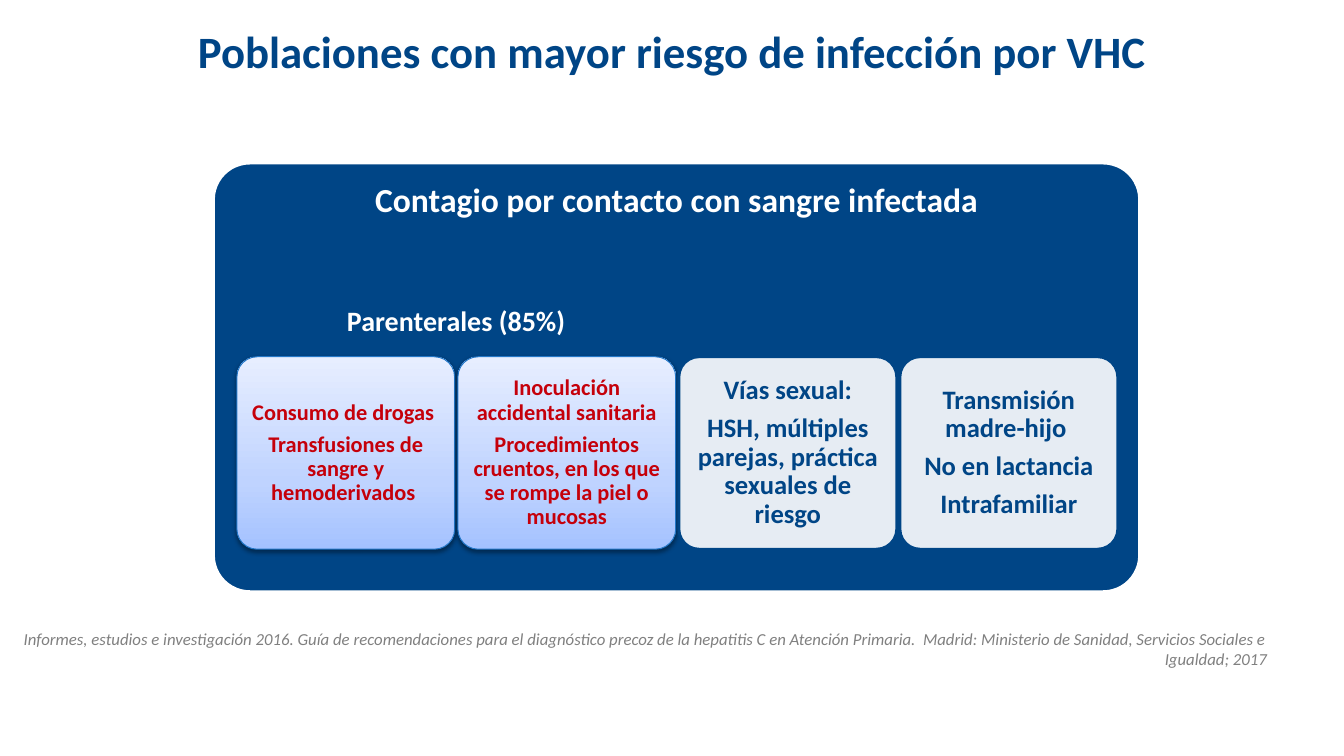
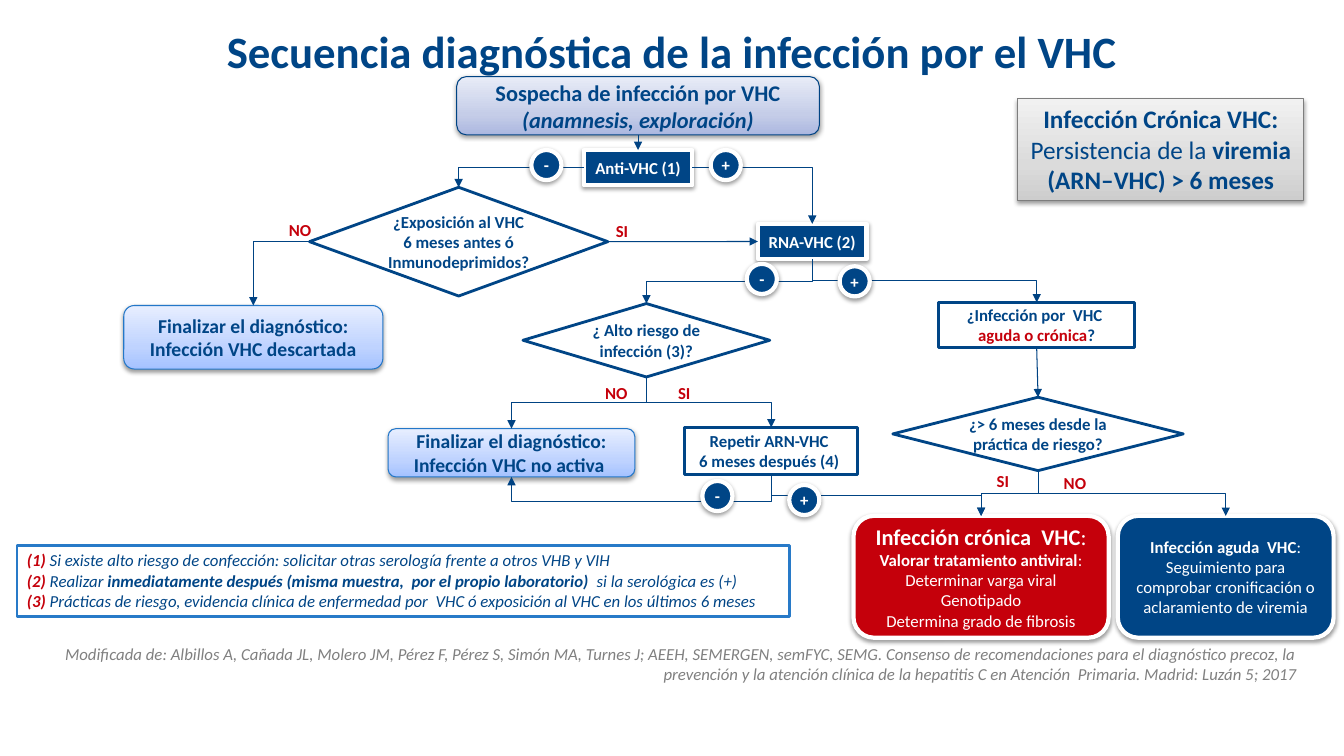
import pptx
import pptx.util
import pptx.dml.color
import pptx.enum.shapes
import pptx.enum.text
import pptx.oxml
import pptx.oxml.ns
import copy

Cm, Pt = pptx.util.Cm, pptx.util.Pt
qn = pptx.oxml.ns.qn
SHAPE = pptx.enum.shapes.MSO_SHAPE
CONNECTOR = pptx.enum.shapes.MSO_CONNECTOR
ALIGN = pptx.enum.text.PP_ALIGN
ANCHOR = pptx.enum.text.MSO_ANCHOR

COLORS = {
    "navy": "004586", "link": "004383", "red": "C5000B", "white": "FFFFFF",
    "grey": "808080", "edge": "2377C8", "note": "287AC8", "steel": "7D7D7D",
}
GRADIENTS = {
    "sky": ("A4C2FF", "BFD3FF", "E7EEFF"),
    "lilac": ("ABB7E0", "C5CDE8", "E8ECF7"),
    "silver": ("CDCDCD", "DBDBDB", "F1F1F1"),
}
STOPS = (0, 0.35, 1)
SHADOW = (
    '<a:outerShdw xmlns:a="http://schemas.openxmlformats.org/drawingml/2006/main" '
    'blurRad="40000" dist="20000" dir="5400000" rotWithShape="0">'
    '<a:srgbClr val="000000"><a:alpha val="38000"/></a:srgbClr></a:outerShdw>'
)
TOP, LEFT, BOTTOM, RIGHT = range(4)


def rgb(name):
    return pptx.dml.color.RGBColor.from_string(COLORS[name])


def site(sp, side):
    """Middle point of one side of a shape."""
    x, y = sp.left + sp.width // 2, sp.top + sp.height // 2
    return [(x, sp.top), (sp.left, y), (x, sp.top + sp.height),
            (sp.left + sp.width, y)][side]


class Deck:
    font = "Calibri"

    def __init__(self):
        self.prs = pptx.Presentation()
        self.prs.slide_width, self.prs.slide_height = Cm(33.87), Cm(19.05)

    def slide(self, title, source, source_at):
        self.s = self.prs.slides.add_slide(self.prs.slide_layouts[6])
        self.text((*source_at, 32.18, 0.81), [source], 12, "grey", bold=False,
                  italic=True, align=ALIGN.RIGHT, anchor=ANCHOR.TOP)
        self.text((1.7, 0.43, 30.48, 1.68), [title], 32, "navy")

    def put_text(self, sp, paras, size, color, bold=True, italic=False,
                 align=ALIGN.CENTER, anchor=ANCHOR.MIDDLE, inset=None, spaced=False):
        """Each paragraph is a string or a list of (text, font changes)."""
        tf = sp.text_frame
        tf.word_wrap, tf.vertical_anchor = True, anchor
        if inset is not None:
            tf.margin_left = tf.margin_right = Cm(inset)
            tf.margin_top = tf.margin_bottom = Cm(inset)
        for i, runs in enumerate(paras):
            p = tf.add_paragraph() if i else tf.paragraphs[0]
            p.alignment = align
            if spaced:
                p.line_spacing, p.space_after = 0.9, Pt(round(0.35 * size, 1))
            f = p.font
            f.name, f.size, f.bold, f.italic = self.font, Pt(size), bold, italic
            f.color.rgb = rgb(color)
            for text, changes in [(runs, {})] if isinstance(runs, str) else runs:
                r = p.add_run()
                r.text = text
                r.font.size = changes.get("size")
                r.font.bold = changes.get("bold")
                r.font.italic = changes.get("italic")
                if "color" in changes:
                    r.font.color.rgb = rgb(changes["color"])

    def text(self, at, paras, size, color, **style):
        sp = self.s.shapes.add_textbox(*map(Cm, at))
        self.put_text(sp, paras, size, color, **style)

    def shape(self, kind, at, fill, line, width, paras, size, color,
              shadow=False, adj=None, alpha=None, **style):
        sp = self.s.shapes.add_shape(kind, *map(Cm, at))
        sp.shadow.inherit = False
        if adj is not None:
            sp.adjustments[0] = adj
        if fill in GRADIENTS:
            self.gradient(sp, GRADIENTS[fill])
        else:
            sp.fill.solid()
            sp.fill.fore_color.rgb = rgb(fill)
        spPr = sp._element.spPr
        if alpha is not None:
            clr = spPr.find(".//" + qn("a:srgbClr"))
            clr.append(clr.makeelement(qn("a:alpha"), {"val": str(alpha * 1000)}))
        sp.line.color.rgb, sp.line.width = rgb(line), Pt(width)
        if shadow:
            spPr.find(qn("a:effectLst")).append(pptx.oxml.parse_xml(SHADOW))
        self.put_text(sp, paras, size, color, **style)
        return sp

    def gradient(self, sp, hexes):
        sp.fill.gradient()
        sp.fill.gradient_angle = 90
        stops = sp._element.spPr.find(".//" + qn("a:gsLst"))
        stops.append(copy.deepcopy(stops[-1]))
        for stop, pos, value in zip(sp.fill.gradient_stops, STOPS, hexes):
            stop.position = pos
            stop.color.rgb = pptx.dml.color.RGBColor.from_string(value)

    def soft(self, at, paras, size, color="navy", fill="sky", line="edge", **style):
        return self.shape(SHAPE.ROUNDED_RECTANGLE, at, fill, line, 0.75, paras,
                          size, color, shadow=True, **style)

    def solid(self, kind, at, paras, fill="navy", **style):
        return self.shape(kind, at, fill, "white", 3, paras, 12, "white",
                          shadow=True, **style)

    def outline(self, at, paras, line="navy", **style):
        return self.shape(SHAPE.RECTANGLE, at, "white", line, 2, paras, 12,
                          "navy", **style)

    def decision(self, at, question):
        return self.shape(SHAPE.DIAMOND, at, "white", "navy", 2, [question], 12,
                          "navy", inset=0.08)

    def sign(self, x, y, mark):
        self.solid(SHAPE.OVAL, (x, y, 0.76, 0.76), [mark], inset=0)

    def answer(self, x, y, word):
        self.text((x, y, 1.3 if word == "NO" else 0.97, 0.76), [word], 12, "red")

    def arrow(self, kind, begin, end):
        c = self.s.shapes.add_connector(kind, *begin, *end)
        c.line.color.rgb, c.line.width = rgb("link"), Pt(0.75)
        spPr = c._element.spPr
        ln = spPr.find(qn("a:ln"))
        ln.append(ln.makeelement(qn("a:tailEnd"), {"type": "triangle"}))
        spPr.append(spPr.makeelement(qn("a:effectLst"), {}))
        return c

    def straight(self, a, side_a, b, side_b):
        c = self.arrow(CONNECTOR.STRAIGHT, site(a, side_a), site(b, side_b))
        c.begin_connect(a, side_a)
        c.end_connect(b, side_b)

    def corner(self, a, side_a, b):
        """Goes sideways from a, then down onto b."""
        c = self.arrow(CONNECTOR.ELBOW, site(a, side_a), site(b, TOP))
        c._element.spPr.find(qn("a:prstGeom")).set("prst", "bentConnector2")

    def step(self, a, b, side_b=TOP, turn=None):
        """Goes down from a, across at height turn (default halfway), then to b."""
        (x1, y1), (x2, y2) = site(a, BOTTOM), site(b, side_b)
        cx, cy = (x1 + x2) // 2, (y1 + y2) // 2
        half_w, half_h = (y2 - y1) // 2, abs(x2 - x1) // 2
        rightward = x2 > x1
        if rightward:
            half_w = -half_w
        c = self.arrow(CONNECTOR.ELBOW, (cx - half_w, cy - half_h),
                       (cx + half_w, cy + half_h))
        spPr = c._element.spPr
        spPr.find(qn("a:xfrm")).set("rot", "16200000" if rightward else "5400000")
        if turn is not None:
            ratio = round((Cm(turn) - y1) / (y2 - y1) * 100000)
            av = spPr.find(qn("a:prstGeom")).get_or_add_avLst()
            av.append(av.makeelement(qn("a:gd"), {"name": "adj1",
                                                  "fmla": f"val {ratio}"}))


def risk_groups(d):
    d.slide("Poblaciones con mayor riesgo de infección por VHC",
            "Informes, estudios e investigación 2016. Guía de recomendaciones para el "
            "diagnóstico precoz de la hepatitis C en Atención Primaria.  Madrid: "
            "Ministerio de Sanidad, Servicios Sociales e Igualdad; 2017", (0, 15.72))
    d.shape(SHAPE.ROUNDED_RECTANGLE, (5.38, 4.11, 23.34, 10.8), "navy", "white", 2,
            ["Contagio por contacto con sangre infectada"], 24, "white",
            adj=0.085, anchor=ANCHOR.TOP, inset=0.25, spaced=True)
    cards = [
        ["Consumo de drogas ", "Transfusiones de sangre y hemoderivados "],
        ["Inoculación accidental sanitaria",
         "Procedimientos cruentos, en los que se rompe la piel o mucosas"],
        ["Vías sexual:", "HSH, múltiples parejas, práctica sexuales de riesgo"],
        ["Transmisión madre-hijo ", "No en lactancia", "Intrafamiliar"],
    ]
    for i, paras in enumerate(cards):
        at = (5.97 + 5.57 * i, 8.99, 5.49, 4.85)
        if i < 2:
            d.soft(at, paras, 16, "red", adj=0.105, inset=0.18, spaced=True)
        else:
            d.shape(SHAPE.ROUNDED_RECTANGLE, at, "white", "navy", 2, paras, 19,
                    "navy", adj=0.105, alpha=90, inset=0.2, spaced=True)
    d.text((7.8, 7.52, 7.39, 1.12), ["Parenterales (85%)"], 20, "white",
           anchor=ANCHOR.TOP)


def diagnosis(d):
    plain, strong, red = {"bold": False}, {"bold": True}, {"color": "red"}
    d.slide("Secuencia diagnóstica de la infección por el VHC",
            "Modificada de: Albillos A, Cañada JL, Molero JM, Pérez F, Pérez S, Simón MA, "
            "Turnes J; AEEH, SEMERGEN, semFYC, SEMG. Consenso de recomendaciones para el "
            "diagnóstico precoz, la prevención y la atención clínica de la hepatitis C en "
            "Atención  Primaria. Madrid: Luzán 5; 2017", (0.76, 16.1))

    suspicion = d.soft((11.51, 1.93, 9.14, 1.47),
                       ["Sospecha de infección por VHC",
                        [("(anamnesis, exploración)", {"italic": True})]],
                       16, fill="lilac", line="link")
    anti = d.solid(SHAPE.RECTANGLE, (14.71, 3.78, 2.74, 0.89), ["Anti-VHC (1) "])
    rna = d.solid(SHAPE.RECTANGLE, (19.1, 5.64, 2.74, 0.89), ["RNA-VHC (2) "])
    exposure = d.decision((7.8, 4.72, 7.52, 2.74),
                          "¿Exposición al VHC 6 meses antes ó Inmunodeprimidos?")
    high_risk = d.decision((13.18, 7.65, 6.22, 1.85), "¿ Alto riesgo de infección (3)?")
    six_months = d.decision((22.5, 10.01, 7.32, 1.85),
                            "¿> 6 meses desde la práctica de riesgo?")
    ruled_out = d.soft((3.12, 7.7, 6.53, 1.6),
                       ["Finalizar el diagnóstico:", "Infección VHC descartada"], 14)
    inactive = d.soft((9.78, 10.8, 6.22, 1.22),
                      ["Finalizar el diagnóstico: Infección VHC no activa "], 14)
    stage = d.outline((23.65, 7.62, 4.95, 1.14),
                      ["¿Infección por  VHC ", [("aguda o crónica", red), ("?", {})]])
    repeat = d.outline((17.25, 10.77, 4.37, 1.19),
                       ["Repetir ARN-VHC ", "6 meses después (4) "])
    large = {"size": Pt(16)}
    chronic = d.solid(SHAPE.ROUNDED_RECTANGLE, (21.51, 13, 6.43, 3.07), [
        [("Infección crónica  VHC", {**large, **strong}), (":", large)],
        [("Valorar tratamiento antiviral", strong), (":", {})],
        "Determinar varga viral", "Genotipado", "Determina grado de fibrosis",
    ], fill="red", bold=False)
    acute = d.solid(SHAPE.ROUNDED_RECTANGLE, (28.17, 13, 5.44, 3.07), [
        [("Infección aguda  VHC", strong), (":", {})],
        "Seguimiento para comprobar cronificación o aclaramiento de viremia",
    ], bold=False)
    d.shape(SHAPE.RECTANGLE, (25.65, 2.49, 7.21, 2.57), "silver", "steel", 0.75, [
        [("Infección Crónica VHC: ", {}), ("Persistencia de la", plain),
         (" viremia (ARN–VHC) > 6 meses", {})],
    ], 18, "navy", shadow=True, anchor=ANCHOR.TOP)
    number = {**red, **strong}
    d.outline((0.43, 13.74, 19.46, 1.8), [
        [("(1) ", number), ("Si existe alto riesgo de confección: solicitar otras "
                            "serología frente a otros VHB y VIH", {})],
        [("(2) ", number), ("Realizar ", {}),
         ("inmediatamente después (misma muestra,  por el propio laboratorio)", strong),
         ("  si la serológica es (+)", {})],
        [("(3) ", number), ("Prácticas de riesgo, evidencia clínica de enfermedad por  "
                            "VHC ó exposición al VHC en los últimos 6 meses", {})],
    ], line="note", bold=False, italic=True, align=ALIGN.LEFT, anchor=ANCHOR.TOP)

    d.straight(suspicion, BOTTOM, anti, TOP)
    d.straight(exposure, RIGHT, rna, LEFT)
    d.straight(stage, BOTTOM, six_months, TOP)
    d.corner(anti, LEFT, exposure)
    d.corner(anti, RIGHT, rna)
    d.corner(exposure, LEFT, ruled_out)
    for a, b in [(rna, high_risk), (rna, stage), (high_risk, inactive),
                 (high_risk, repeat), (repeat, chronic), (six_months, chronic),
                 (six_months, acute)]:
        d.step(a, b)
    d.step(repeat, inactive, BOTTOM, turn=12.65)

    for x, y, mark in [(13.39, 3.78, "-"), (17.91, 3.78, "+"), (18.82, 6.65, "-"),
                       (21.16, 6.71, "+"), (17.7, 12.12, "-"), (19.89, 12.22, "+")]:
        d.sign(x, y, mark)
    for x, y, word in [(6.91, 5.41, "NO"), (15.19, 5.44, "SI"), (14.88, 9.53, "NO"),
                       (16.76, 9.53, "SI"), (24.79, 11.73, "SI"), (26.44, 11.79, "NO")]:
        d.answer(x, y, word)


def main():
    d = Deck()
    risk_groups(d)
    diagnosis(d)
    d.prs.save("out.pptx")


if __name__ == "__main__":
    main()
